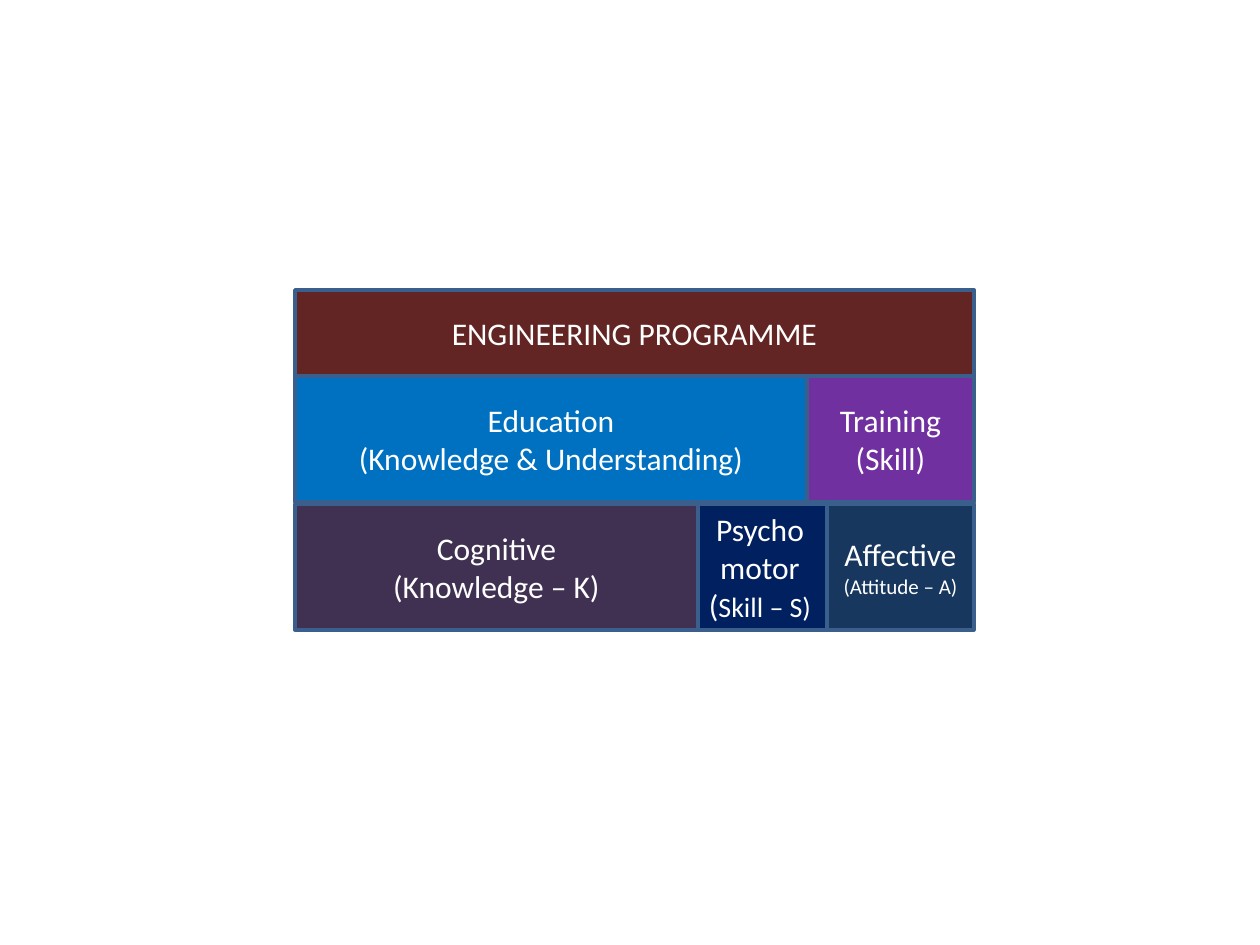
import pptx
import pptx.util
import pptx.dml.color
import pptx.enum.shapes
import pptx.enum.text

RGBColor = pptx.dml.color.RGBColor
WHITE = RGBColor(0xFF, 0xFF, 0xFF)
OUTLINE = RGBColor(0x3A, 0x5F, 0x8C)
MAROON = RGBColor(0x63, 0x25, 0x23)
BLUE = RGBColor(0x00, 0x70, 0xC0)
PURPLE = RGBColor(0x70, 0x30, 0xA0)
PLUM = RGBColor(0x40, 0x31, 0x52)
NAVY = RGBColor(0x00, 0x20, 0x60)
STEEL = RGBColor(0x17, 0x37, 0x5E)

PX = 914400 // 126
LEFT = 295

# (top, height, blocks); each block: left offset, width, fill, paragraphs of (text, size)
ROWS = [
    (504, 126, [
        (532, 147, STEEL, [[("Affective", 18)], [("(Attitude – A)", 12)]]),
        (398, 134, NAVY, [[("Psychomotor", 18)], [("(", 18), ("Skill – S)", 16)]]),
        (0, 403, PLUM, [[("Cognitive", 18)], [("(Knowledge – K)", 18)]]),
    ]),
    (376, 126, [
        (0, 512, BLUE, [[("Education", 18)], [("(Knowledge & Understanding)", 18)]]),
        (512, 167, PURPLE, [[("Training", 18)], [("(Skill)", 18)]]),
    ]),
    (290, 86, [
        (0, 679, MAROON, [[("ENGINEERING PROGRAMME", 18)]]),
    ]),
]


def add_block(page, left, top, width, height, fill, lines):
    box = page.shapes.add_shape(
        pptx.enum.shapes.MSO_SHAPE.RECTANGLE,
        left * PX, top * PX, width * PX, height * PX)
    box.shadow.inherit = False
    box.fill.solid()
    box.fill.fore_color.rgb = fill
    box.line.color.rgb = OUTLINE
    box.line.width = pptx.util.Pt(2)
    frame = box.text_frame
    frame.word_wrap = True
    frame.vertical_anchor = pptx.enum.text.MSO_ANCHOR.MIDDLE
    for index, line in enumerate(lines):
        para = frame.add_paragraph() if index else frame.paragraphs[0]
        para.alignment = pptx.enum.text.PP_ALIGN.CENTER
        for text, size in line:
            span = para.add_run()
            span.text = text
            span.font.name = "Calibri"
            span.font.size = pptx.util.Pt(size)
            span.font.color.rgb = WHITE


def main():
    deck = pptx.Presentation()
    deck.slide_width = 1260 * PX
    deck.slide_height = 945 * PX
    page = deck.slides.add_slide(deck.slide_layouts[6])
    for top, height, blocks in ROWS:
        for offset, width, fill, lines in blocks:
            add_block(page, LEFT + offset, top, width, height, fill, lines)
    deck.save("out.pptx")


if __name__ == "__main__":
    main()
